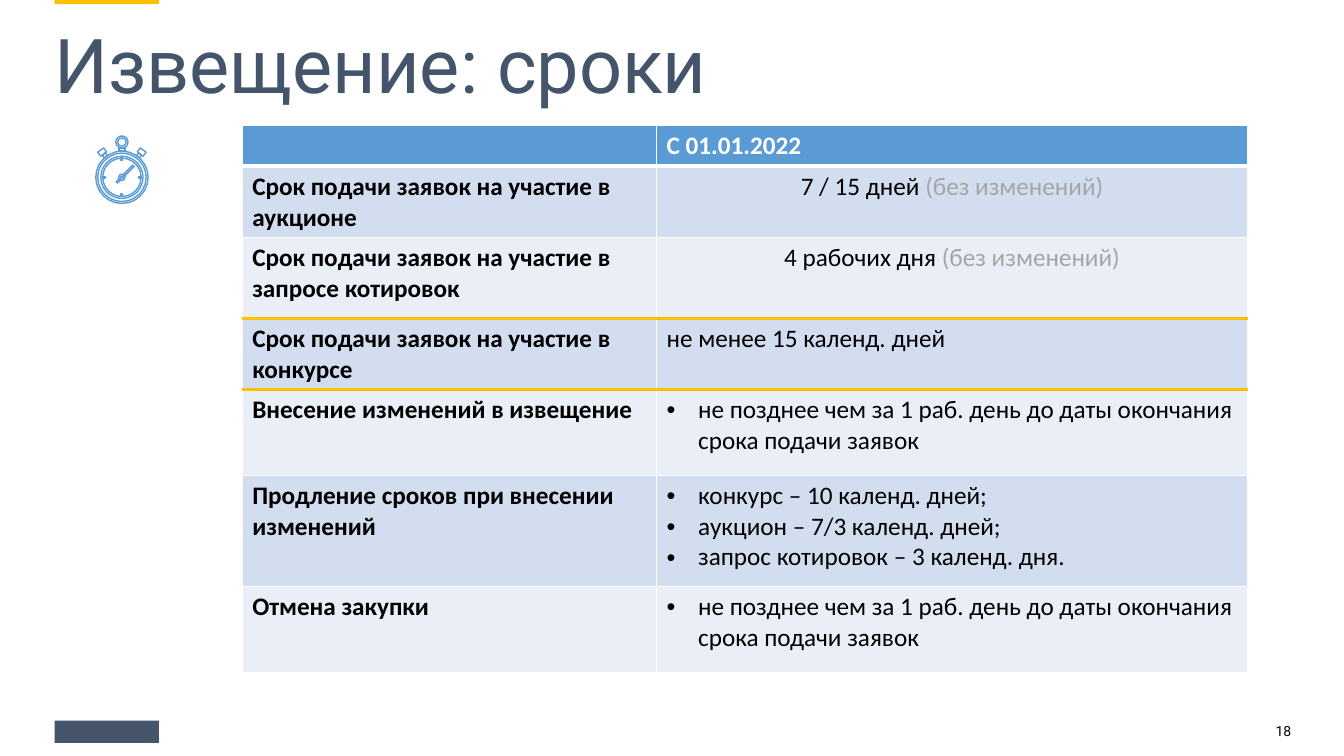
"""Build the slide on notice deadlines."""
import math
from dataclasses import dataclass, field

import lxml.etree
import pptx
import pptx.dml.color
import pptx.enum.shapes
import pptx.enum.text
import pptx.oxml.ns
import pptx.shapes.autoshape
import pptx.slide
import pptx.table
import pptx.text.text
import pptx.util

Pt = pptx.util.Pt
Align = pptx.enum.text.PP_ALIGN
qn = pptx.oxml.ns.qn


@dataclass(frozen=True)
class Theme:
    white: str = "FFFFFF"
    black: str = "000000"
    navy: str = "44546A"
    gold: str = "FFC000"
    blue: str = "5B9BD5"
    gray: str = "A5A5A5"
    bands: tuple[str, str] = ("D2DEEF", "EAEFF7")
    head: str = "Roboto"
    body: str = "Calibri"
    title: float = 54
    cell: float = 18
    page: float = 10


THEME = Theme()


@dataclass(frozen=True)
class Run:
    text: str
    color: str = THEME.black
    bold: bool = False
    font: str = THEME.body
    size: float = THEME.cell


@dataclass(frozen=True)
class Edge:
    color: str = THEME.white
    width: float = 1


@dataclass(frozen=True)
class Row:
    label: str
    lines: tuple[tuple[Run, ...], ...]
    height: float
    align: Align = Align.LEFT
    bullet: bool = False
    top: Edge = field(default_factory=Edge)
    base: Edge = field(default_factory=Edge)


@dataclass(frozen=True)
class Ring:
    radius: float
    dy: float = 0

    def points(self) -> list[tuple[float, float]]:
        """List points around the circle."""
        turns = (math.tau * step / 24 for step in range(24))
        return [(self.radius * math.cos(turn), self.dy + self.radius * math.sin(turn))
                for turn in turns]


@dataclass(frozen=True)
class Bar:
    reach: float
    width: float
    height: float
    turn: float = 0

    def points(self) -> list[tuple[float, float]]:
        """List the corners of a bar set out along a ray."""
        sine, cosine = math.sin(math.radians(self.turn)), math.cos(math.radians(self.turn))
        corners = ((-1, -1), (1, -1), (1, 1), (-1, 1))
        flat = ((x * self.width / 2, y * self.height / 2 - self.reach) for x, y in corners)
        return [(x * cosine - y * sine, x * sine + y * cosine) for x, y in flat]


SAME = Run("(без изменений)", THEME.gray)
LATE = ((Run("не позднее чем за 1 раб. день до даты окончания срока подачи заявок"),),)
GOLD = Edge(THEME.gold, 2.25)

ROWS = (
    Row("", ((Run("С 01.01.2022", THEME.white, True),),), 29.2, base=Edge(THEME.white, 3)),
    Row("Срок подачи заявок на участие в аукционе",
        ((Run("7 / 15 дней "), SAME),), 50.8, Align.CENTER),
    Row("Срок подачи заявок на участие в запросе котировок",
        ((Run("4 рабочих дня "), SAME),), 57.8, Align.CENTER, base=GOLD),
    Row("Срок подачи заявок на участие в конкурсе",
        ((Run("не менее 15 календ. дней"),),), 51, top=GOLD, base=GOLD),
    Row("Внесение изменений в извещение", LATE, 61.2, bullet=True, top=GOLD),
    Row("Продление сроков при внесении изменений",
        ((Run("конкурс – 10 календ. дней;"),),
         (Run("аукцион – 7/3 календ. дней;"),),
         (Run("запрос котировок – 3 календ. дня."),)), 79.3, bullet=True),
    Row("Отмена закупки", LATE, 61.2, bullet=True),
)
COLS = (296, 422.2)

WATCH = (
    *(Ring(radius) for radius in (18.7, 17.3, 15.1, 13.7, 2.2, 0.9)),
    Ring(4.3, -25.2), Ring(2.9, -25.2), Bar(19.8, 4.3, 2.2),
    *(Bar(22.9, 5.2, 3.6, turn) for turn in (-38, 38)),
    *(Bar(19.9, 2.6, 2.4, turn) for turn in (-38, 38)),
    *(Bar(12.8, 1.2, 1.8, turn) for turn in range(0, 360, 90)),
    Bar(6.9, 1.4, 9.4, 45), Bar(-3.7, 1.4, 3, 45),
)


def tint(code: str) -> pptx.dml.color.RGBColor:
    """Turn a hex code into a colour."""
    return pptx.dml.color.RGBColor.from_string(code)


def write(para: pptx.text.text._Paragraph, runs: tuple[Run, ...]) -> None:
    """Add styled runs to a paragraph."""
    for item in runs:
        run = para.add_run()
        run.text = item.text
        run.font.name = item.font
        run.font.size = Pt(item.size)
        run.font.bold = item.bold
        run.font.color.rgb = tint(item.color)


def label(slide: pptx.slide.Slide, box: tuple[float, ...], run: Run,
          align: Align, space: float) -> None:
    """Place a line of text without insets."""
    frame = slide.shapes.add_textbox(*map(Pt, box)).text_frame
    frame.word_wrap = True
    frame.margin_left = frame.margin_right = frame.margin_top = frame.margin_bottom = 0
    para = frame.paragraphs[0]
    para.alignment = align
    para.line_spacing = space
    write(para, (run,))


def paint(shape: pptx.shapes.autoshape.Shape, fill: str) -> None:
    """Give a shape a flat fill and no outline."""
    shape.shadow.inherit = False
    shape.fill.solid()
    shape.fill.fore_color.rgb = tint(fill)
    shape.line.fill.background()


def block(slide: pptx.slide.Slide, box: tuple[float, ...], fill: str) -> None:
    """Draw a plain rectangle."""
    kind = pptx.enum.shapes.MSO_SHAPE.RECTANGLE
    paint(slide.shapes.add_shape(kind, *map(Pt, box)), fill)


def watch(slide: pptx.slide.Slide, left: float, top: float) -> None:
    """Draw the stopwatch around its centre as one outline."""
    paths = [[(Pt(left + x), Pt(top + y)) for x, y in part.points()] for part in WATCH]
    pen = slide.shapes.build_freeform(*paths[0][0])
    for path in paths:
        if path is not paths[0]:
            pen.move_to(*path[0])
        pen.add_line_segments(path[1:], close=True)
    shape = pen.convert_to_shape()
    paint(shape, THEME.white)
    shape.line.color.rgb = tint(THEME.blue)
    shape.line.width = Pt(1)


def border(cell: pptx.table._Cell, top: Edge, base: Edge) -> None:
    """Set the four edges of a cell."""
    props = cell._tc.get_or_add_tcPr()
    edges = {"a:lnL": Edge(), "a:lnR": Edge(), "a:lnT": top, "a:lnB": base}
    for place, (tag, edge) in enumerate(edges.items()):
        line = lxml.etree.SubElement(props, qn(tag), w=str(Pt(edge.width)))
        fill = lxml.etree.SubElement(line, qn("a:solidFill"))
        lxml.etree.SubElement(fill, qn("a:srgbClr"), val=edge.color)
        props.insert(place, line)


def dot(para: pptx.text.text._Paragraph) -> None:
    """Give a paragraph a hanging bullet."""
    props = para._p.get_or_add_pPr()
    props.set("marL", str(Pt(22.5)))
    props.set("indent", str(-Pt(22.5)))
    lxml.etree.SubElement(props, qn("a:buFont"), typeface="Arial")
    lxml.etree.SubElement(props, qn("a:buChar"), char="•")


def grid(slide: pptx.slide.Slide, left: float, top: float) -> None:
    """Build the table of terms."""
    size = (sum(COLS), sum(row.height for row in ROWS))
    table = slide.shapes.add_table(len(ROWS), len(COLS), *map(Pt, (left, top, *size))).table
    table.first_row = table.horz_banding = False
    for col, width in zip(table.columns, COLS):
        col.width = Pt(width)
    for index, row in enumerate(ROWS):
        table.rows[index].height = Pt(row.height)
        name, term = table.cell(index, 0), table.cell(index, 1)
        for cell in (name, term):
            cell.fill.solid()
            cell.fill.fore_color.rgb = tint(THEME.bands[(index - 1) % 2] if index else THEME.blue)
            border(cell, row.top, row.base)
        if row.label:
            write(name.text_frame.paragraphs[0], (Run(row.label, bold=True),))
        for number, runs in enumerate(row.lines):
            frame = term.text_frame
            para = frame.add_paragraph() if number else frame.paragraphs[0]
            para.alignment = row.align
            if row.bullet:
                dot(para)
            write(para, runs)


def main() -> None:
    """Compose and save the slide."""
    deck = pptx.Presentation()
    deck.slide_width, deck.slide_height = Pt(960), Pt(540)
    slide = deck.slides.add_slide(deck.slide_layouts[6])
    block(slide, (39, 0, 74.5, 3), THEME.gold)
    block(slide, (39, 514.8, 74.5, 15.8), THEME.navy)
    label(slide, (788.4, 517.7, 133.9, 22.3),
          Run("18", font=THEME.head, size=THEME.page), Align.RIGHT, 0.9)
    label(slide, (38.8, 25.2, 883.4, 103),
          Run("Извещение: сроки", THEME.navy, font=THEME.head, size=THEME.title), Align.LEFT, 0.8)
    grid(slide, 173, 89.6)
    watch(slide, 87.1, 126.7)
    deck.save("out.pptx")


if __name__ == "__main__":
    main()
